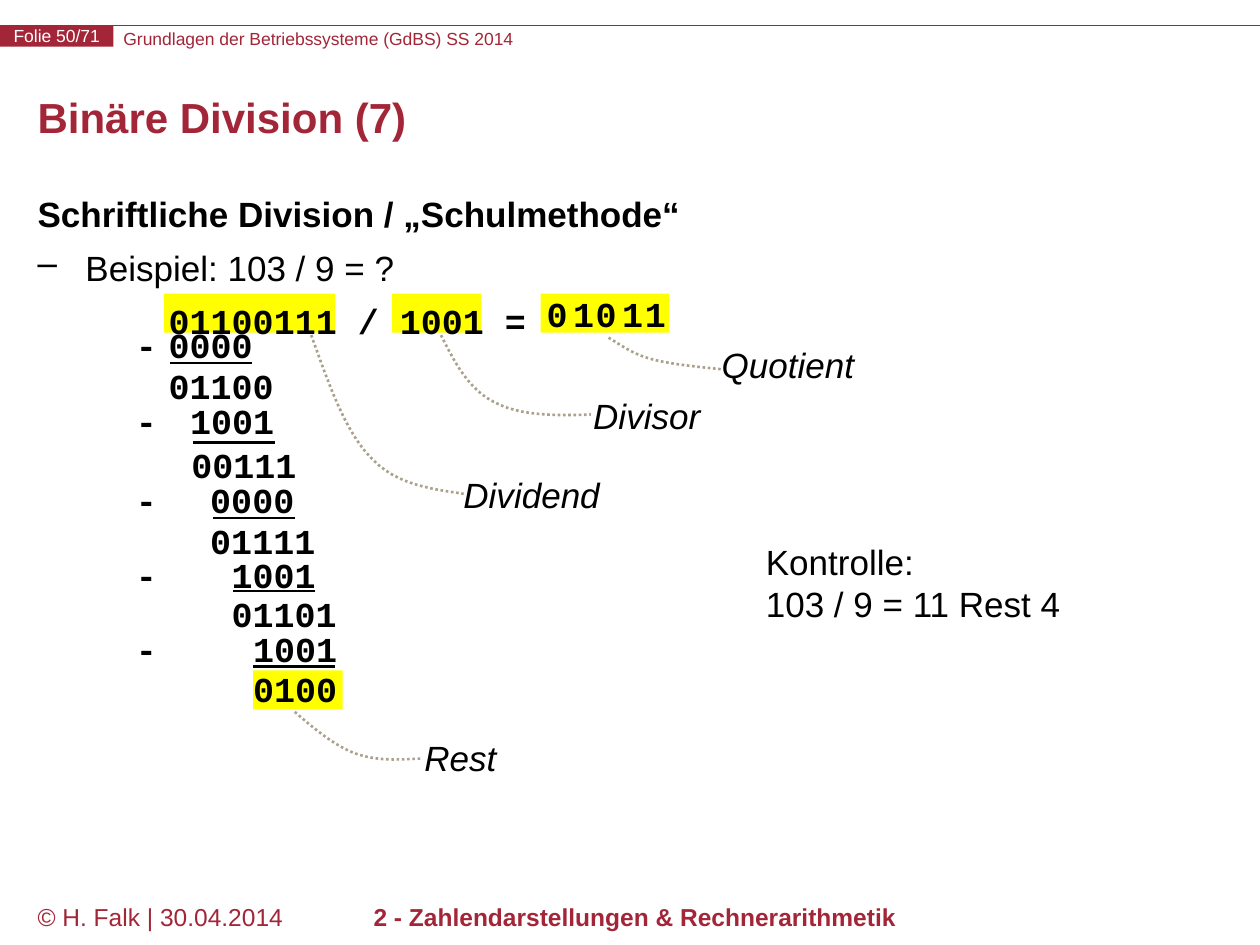
"""Build the slide on written binary division."""
import dataclasses

import pptx
import pptx.dml.color
import pptx.enum.dml
import pptx.enum.shapes
import pptx.enum.text
import pptx.oxml
import pptx.oxml.ns
import pptx.util

ALIGN = pptx.enum.text.PP_ALIGN
ANCHOR = pptx.enum.text.MSO_ANCHOR
EMU_PER_PX = 9144


@dataclasses.dataclass(frozen=True)
class Theme:
    accent: str = "A32638"
    ink: str = "000000"
    paper: str = "FFFFFF"
    marker: str = "FFFF00"
    guide: str = "AAA28D"
    sans: str = "Arial"
    mono: str = "Courier New"
    header_size: int = 10
    footer_size: int = 14
    body_size: int = 20
    title_size: int = 24
    hairline: float = 0.75
    rule: float = 1.5


def px(value):
    return pptx.util.Emu(round(value * EMU_PER_PX))


def rgb(value):
    return pptx.dml.color.RGBColor.from_string(value)


def cubic(start, first, second, end, t):
    u = 1 - t
    return tuple(
        u**3 * a + 3 * u * u * t * b + 3 * u * t * t * c + t**3 * d
        for a, b, c, d in zip(start, first, second, end)
    )


class SlideBuilder:
    def __init__(self, slide, theme):
        self.slide = slide
        self.theme = theme

    def format(self, paragraph, size=None, color=None, font=None, bold=False, italic=False):
        for run in paragraph.runs:
            run.font.name = font or self.theme.sans
            run.font.size = pptx.util.Pt(size or self.theme.body_size)
            run.font.color.rgb = rgb(color or self.theme.ink)
            run.font.bold = bold
            run.font.italic = italic

    def text(self, box, words, wrap=False, align=ALIGN.LEFT, anchor=ANCHOR.TOP, inset=True, **style):
        shape = self.slide.shapes.add_textbox(*map(px, box))
        frame = shape.text_frame
        frame.word_wrap = wrap
        frame.vertical_anchor = anchor
        if not wrap:
            frame.auto_size = pptx.enum.text.MSO_AUTO_SIZE.SHAPE_TO_FIT_TEXT
        if not inset:
            frame.margin_left = frame.margin_right = frame.margin_top = frame.margin_bottom = 0
        frame.text = words
        for paragraph in frame.paragraphs:
            paragraph.alignment = align
            self.format(paragraph, **style)
        return frame

    def digits(self, left, top, words):
        width = round(20 + 17 * len(words))
        self.text((left, top, width, 44), words, font=self.theme.mono, bold=True)

    def box(self, box, color):
        shape = self.slide.shapes.add_shape(pptx.enum.shapes.MSO_SHAPE.RECTANGLE, *map(px, box))
        shape.shadow.inherit = False
        shape.fill.solid()
        shape.fill.fore_color.rgb = rgb(color)
        shape.line.fill.background()
        return shape

    def badge(self, box, words):
        frame = self.box(box, self.theme.accent).text_frame
        frame.margin_left = frame.margin_right = frame.margin_top = frame.margin_bottom = 0
        frame.word_wrap = False
        frame.vertical_anchor = ANCHOR.MIDDLE
        frame.text = words
        frame.paragraphs[0].alignment = ALIGN.CENTER
        self.format(frame.paragraphs[0], self.theme.header_size, self.theme.paper)

    def rule(self, left, top, length, color, width):
        line = self.slide.shapes.add_connector(
            pptx.enum.shapes.MSO_CONNECTOR.STRAIGHT, px(left), px(top), px(left + length), px(top)
        )
        line.line.color.rgb = rgb(color)
        line.line.width = pptx.util.Pt(width)
        pptx.oxml.ns.qn("a:effectLst")
        line._element.spPr.append(line._element.makeelement(pptx.oxml.ns.qn("a:effectLst")))

    def curve(self, points, steps=12):
        samples = [
            cubic(*points[index:index + 4], step / steps)
            for index in range(0, len(points) - 1, 3)
            for step in range(1, steps + 1)
        ]
        builder = self.slide.shapes.build_freeform(
            *(round(value * EMU_PER_PX) for value in points[0])
        )
        builder.add_line_segments([(px(x), px(y)) for x, y in samples], close=False)
        shape = builder.convert_to_shape()
        shape.shadow.inherit = False
        shape.fill.background()
        shape.line.color.rgb = rgb(self.theme.guide)
        shape.line.width = pptx.util.Pt(self.theme.rule)
        shape.line.dash_style = pptx.enum.dml.MSO_LINE.ROUND_DOT

    def indent(self, paragraph, margin, first, bullet=None):
        properties = paragraph._p.get_or_add_pPr()
        properties.set("marL", str(px(margin)))
        properties.set("indent", str(px(first)))
        if bullet:
            mark = properties.makeelement(pptx.oxml.ns.qn("a:buChar"), {"char": bullet})
            properties.append(mark)

    def body(self, box):
        lines = ("Schriftliche Division / „Schulmethode“", "Beispiel: 103 / 9 = ?", "01100111 / 1001 =")
        heading, example, division = self.text(box, "\n".join(lines), wrap=True).paragraphs
        for paragraph, spacing in ((heading, 0.9), (example, 1.2), (division, 1.2)):
            paragraph.line_spacing = spacing
            paragraph.space_before = pptx.util.Pt(1.5)
        self.format(heading, bold=True)
        self.format(division, font=self.theme.mono, bold=True)
        self.indent(example, 38, -38, "–")
        self.indent(division, 104, 0)


def main():
    presentation = pptx.Presentation()
    presentation.slide_width = px(1000)
    presentation.slide_height = px(750)
    theme = Theme()
    slide = SlideBuilder(presentation.slides.add_slide(presentation.slide_layouts[6]), theme)

    slide.rule(0, 20, 1000, theme.accent, theme.hairline)
    slide.text((98, 22, 660, 17), "Grundlagen der Betriebssysteme (GdBS) SS 2014", wrap=True,
               inset=False, size=theme.header_size, color=theme.accent)
    slide.badge((0, 20, 90, 17), "Folie 50/71")
    footer = {"wrap": True, "size": theme.footer_size, "color": theme.accent}
    slide.text((20, 711, 220, 39), "© H. Falk | 30.04.2014", **footer)
    slide.text((201, 711, 606, 39), "2 - Zahlendarstellungen & Rechnerarithmetik",
               align=ALIGN.CENTER, bold=True, **footer)
    title = slide.text((20, 60, 961, 72), "Binäre Division (7)", wrap=True, anchor=ANCHOR.MIDDLE,
                       size=theme.title_size, color=theme.accent, bold=True)
    title.paragraphs[0].line_spacing = pptx.util.Pt(theme.title_size)

    for left, top, width in ((130, 233, 136), (429, 233, 102), (201, 532, 71), (311, 233, 71)):
        slide.box((left, top, width, 31), theme.marker)
    slide.body((20, 152, 961, 546))
    for left, digit in zip((424, 445, 463, 484, 502), "01011"):
        slide.digits(left, 227, digit)

    division_steps = (
        (252, 124, "0000", 135, 288, 124, "01100"),
        (312, 141, "1001", 153, 351, 142, "00111"),
        (375, 157, "0000", 169, 411, 157, "01111"),
        (434, 174, "1001", 185, 469, 174, "01101"),
        (493, 191, "1001", 201, 529, 191, "0100"),
    )
    for top, left, subtrahend, rule_left, rule_top, rest_left, remainder in division_steps:
        slide.digits(98, top, "-")
        slide.digits(left, top, subtrahend)
        slide.rule(rule_left, rule_top, 65, theme.ink, theme.rule)
        slide.digits(rest_left, rule_top - 4, remainder)

    callouts = (
        ("Quotient", (563, 268, 126, 44),
         ((483, 268), (493, 274), (502, 281), (517, 285), (532, 289), (552, 291), (572, 293))),
        ("Divisor", (461, 308, 106, 44),
         ((350, 266), (361, 288), (372, 309), (392, 319), (412, 330), (440, 330), (469, 329))),
        ("Dividend", (358, 371, 130, 44),
         ((247, 266), (261, 305), (274, 343), (295, 364), (315, 385), (342, 388), (368, 392))),
        ("Rest", (327, 580, 78, 44),
         ((234, 565), (250, 579), (266, 592), (282, 598), (299, 604), (316, 603), (334, 602))),
    )
    for label, box, points in callouts:
        slide.text(box, label, italic=True)
        slide.curve(points)
    slide.text((598, 424, 255, 77), "Kontrolle:\n103 / 9 = 11 Rest 4")
    presentation.save("out.pptx")


if __name__ == "__main__":
    main()
